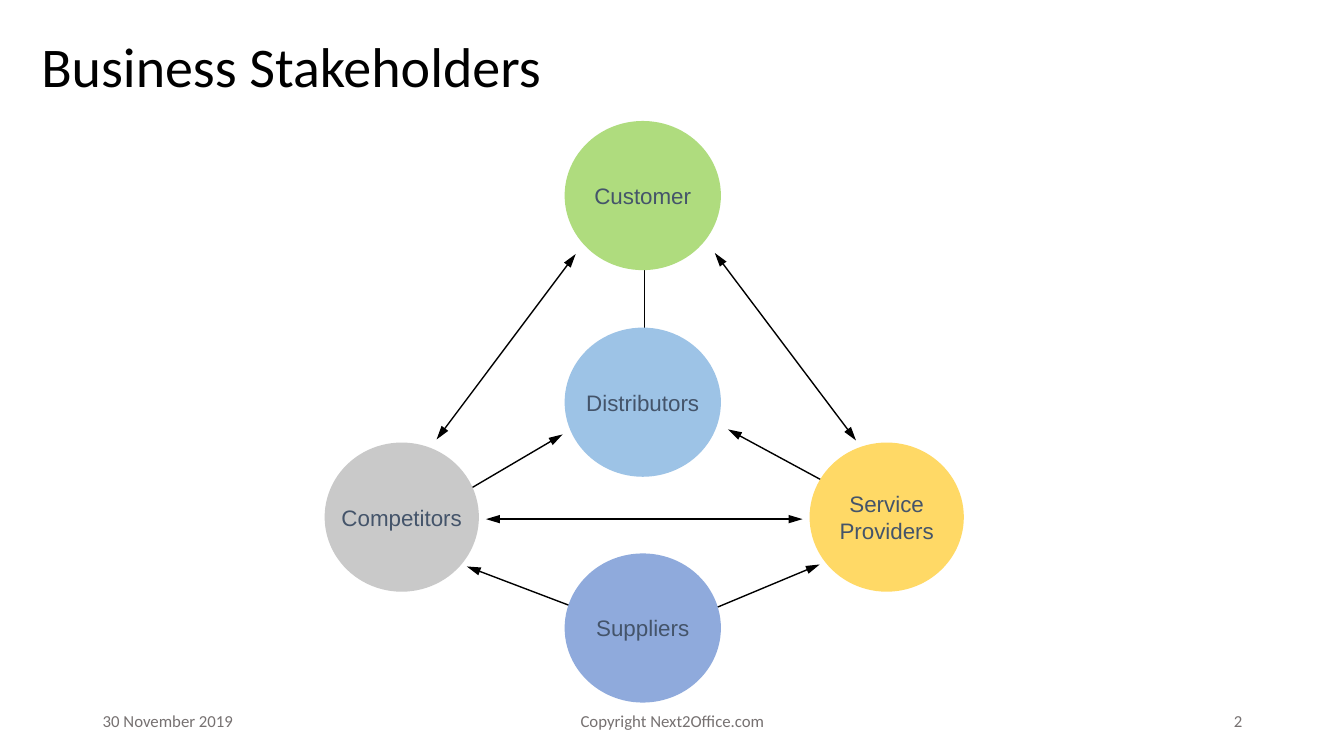
from lxml.etree import SubElement
from pptx import Presentation
from pptx.dml.color import RGBColor
from pptx.enum.shapes import MSO_CONNECTOR, MSO_SHAPE
from pptx.enum.text import MSO_ANCHOR, PP_ALIGN
from pptx.oxml.ns import qn
from pptx.util import Inches, Pt

TITLE_FORMAT = {"name": "Calibri", "size": Pt(40), "bold": False}
FOOTER_FORMAT = {"name": "Calibri", "size": Pt(12)}
LABEL_FORMAT = {"name": "Arial", "size": Pt(16)}

# Name, left and top within the diagram, width, fill
STAKEHOLDERS = [
    ("Customer", 2.38, 0, 1.55, "AFDC7E"),
    ("Service\nProviders", 4.81, 3.19, 1.53, "FFD966"),
    ("Distributors", 2.38, 2.05, 1.55, "9DC3E6"),
    ("Competitors", 0, 3.19, 1.53, "C9C9C9"),
    ("Suppliers", 2.38, 4.29, 1.55, "8FAADC"),
]
CIRCLE_HEIGHT = 1.48

# Start and end within the diagram, ends that carry an arrowhead
RELATIONS = [
    ((1.41, 4.42), (2.91, 4.99), ["headEnd"]),
    ((3.33, 5.06), (4.91, 4.4), ["tailEnd"]),
    ((2.36, 3.11), (0.88, 3.98), ["headEnd"]),
    ((5.57, 3.91), (4, 3.06), ["tailEnd"]),
    ((3.17, 0.71), (3.17, 2.58), []),
    ((2.49, 1.32), (1.11, 3.16), ["headEnd", "tailEnd"]),
    ((3.87, 1.31), (5.27, 3.17), ["headEnd", "tailEnd"]),
    ((4.74, 3.95), (1.6, 3.95), ["headEnd", "tailEnd"]),
]


def color(value):
    return RGBColor.from_string(value)


def write(shape, text, font_format, text_color, align):
    frame = shape.text_frame
    frame.vertical_anchor = MSO_ANCHOR.MIDDLE
    frame.text = text
    for para in frame.paragraphs:
        para.alignment = align
        for name, value in font_format.items():
            setattr(para.font, name, value)
        para.font.color.rgb = color(text_color)


def add_title(page, left, top, width, height):
    title = page.shapes.title
    title.left, title.top = Inches(left), Inches(top)
    title.width, title.height = Inches(width), Inches(height)
    write(title, "Business Stakeholders", TITLE_FORMAT, "000000", PP_ALIGN.LEFT)
    title.text_frame.paragraphs[0].line_spacing = 0.9


def add_relation(page, left, top, start, end, arrow_ends):
    line = page.shapes.add_connector(
        MSO_CONNECTOR.STRAIGHT,
        Inches(left + start[0]), Inches(top + start[1]),
        Inches(left + end[0]), Inches(top + end[1]))
    line.line.color.rgb = color("000000")
    line.line.width = Pt(1)
    properties = line.line._get_or_add_ln()
    for arrow_end in arrow_ends:
        SubElement(properties, qn(f"a:{arrow_end}"), type="triangle", w="med", len="lg")
    SubElement(line._element.spPr, qn("a:effectLst"))


def add_stakeholder(page, name, left, top, width, fill):
    circle = page.shapes.add_shape(
        MSO_SHAPE.OVAL, Inches(left), Inches(top), Inches(width), Inches(CIRCLE_HEIGHT))
    circle.shadow.inherit = False
    circle.fill.solid()
    circle.fill.fore_color.rgb = color(fill)
    circle.line.fill.background()
    frame = circle.text_frame
    frame.word_wrap = False
    for side in ("left", "top", "right", "bottom"):
        setattr(frame, f"margin_{side}", 0)
    write(circle, name, LABEL_FORMAT, "44546A", PP_ALIGN.CENTER)


def add_diagram(page, left, top):
    """Draw the relations first so that the circles cover their ends."""
    for start, end, arrow_ends in RELATIONS:
        add_relation(page, left, top, start, end, arrow_ends)
    for name, x, y, width, fill in STAKEHOLDERS:
        add_stakeholder(page, name, left + x, top + y, width, fill)


def add_footer(page, left, top, width, height):
    side, middle = 3, 4.5
    parts = [
        ("30 November 2019", 0, side, PP_ALIGN.LEFT),
        ("Copyright Next2Office.com", (width - middle) / 2, middle, PP_ALIGN.CENTER),
        ("2", width - side, side, PP_ALIGN.RIGHT),
    ]
    for text, x, part_width, align in parts:
        box = page.shapes.add_textbox(
            Inches(left + x), Inches(top), Inches(part_width), Inches(height))
        box.text_frame.word_wrap = True
        write(box, text, FOOTER_FORMAT, "767171", align)


def main():
    deck = Presentation()
    deck.slide_width, deck.slide_height = Inches(13.33), Inches(7.5)
    page = deck.slides.add_slide(deck.slide_layouts[5])
    add_title(page, 0.31, 0.14, 11.5, 1.09)
    add_footer(page, 0.92, 6.95, 11.5, 0.4)
    add_diagram(page, 3.22, 1.2)
    deck.save("out.pptx")


if __name__ == "__main__":
    main()
